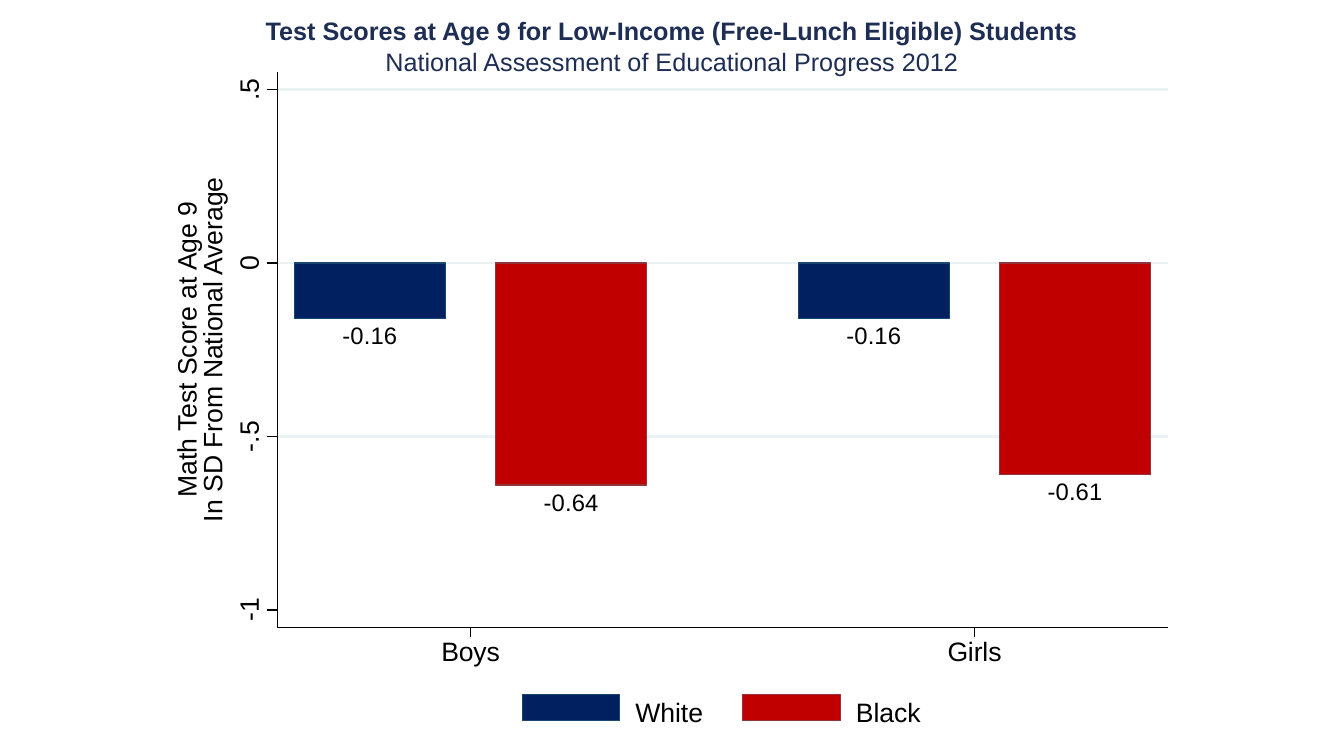
from pptx import Presentation
from pptx.chart.data import CategoryChartData
from pptx.dml.color import RGBColor
from pptx.enum.chart import XL_CHART_TYPE, XL_LABEL_POSITION, XL_TICK_LABEL_POSITION, XL_TICK_MARK
from pptx.enum.shapes import MSO_CONNECTOR, MSO_SHAPE
from pptx.enum.text import MSO_ANCHOR, PP_ALIGN
from pptx.oxml import parse_xml
from pptx.oxml.ns import nsdecls, qn
from pptx.util import Cm, Pt
from lxml.etree import SubElement

TITLE = ["Test Scores at Age 9 for Low-Income (Free-Lunch Eligible) Students",
         "National Assessment of Educational Progress 2012"]
AXIS_TITLE = ["Math Test Score at Age 9", "In SD From National Average"]
GENDERS = ["Boys", "Girls"]
SCORES = {"White": (-0.16, -0.16), "Black": (-0.64, -0.61)}
TICKS = {0.5: ".5", 0: "0", -0.5: "-.5", -1: "-1"}
COLORS = {"title": "1E2D53", "ink": "000000", "grid": "EAF2F3",
          "White": "002060", "White edge": "1A476F",
          "Black": "C00000", "Black edge": "90353B"}
FONT = "Arial"
LOW, HIGH = -1.05, 0.55
ZERO_Y, UNIT = 6.63, 8.74
AXIS_LEFT, AXIS_RIGHT, TICK = 6.99, 29.44, 0.25
BARS_LEFT, GENDER_WIDTH = 5.51, 12.7
LABEL_ROOM = 1.4
LEGEND_LEFT, LEGEND_TOP, LEGEND_STEP = 13.16, 17.5, 5.56
SWATCH_WIDTH, SWATCH_HEIGHT = 2.46, 0.66


def rgb(name):
    return RGBColor.from_string(COLORS[name])


def score_y(score):
    return ZERO_Y - score * UNIT


def add_text(slide, lines, x, y, width, height, *, size=19, color="ink",
             bold_first=False, align=PP_ALIGN.CENTER, rotation=0):
    box = slide.shapes.add_textbox(Cm(x - width / 2), Cm(y - height / 2), Cm(width), Cm(height))
    box.rotation = rotation
    frame = box.text_frame
    frame.word_wrap = True
    frame.vertical_anchor = MSO_ANCHOR.MIDDLE
    frame.margin_left = frame.margin_right = frame.margin_top = frame.margin_bottom = 0
    frame.text = "\n".join(lines)
    for index, paragraph in enumerate(frame.paragraphs):
        paragraph.alignment = align
        font = paragraph.runs[0].font
        font.name, font.size, font.bold = FONT, Pt(size), bold_first and index == 0
        font.color.rgb = rgb(color)


def add_line(slide, x1, y1, x2, y2, color="ink", weight=0.88):
    line = slide.shapes.add_connector(MSO_CONNECTOR.STRAIGHT, Cm(x1), Cm(y1), Cm(x2), Cm(y2))
    line.line.color.rgb = rgb(color)
    line.line.width = Pt(weight)
    SubElement(line._element.spPr, qn("a:effectLst"))


def paint(target, race):
    target.fill.solid()
    target.fill.fore_color.rgb = rgb(race)
    target.line.color.rgb = rgb(race + " edge")
    target.line.width = Pt(0.88)


def add_bars(slide):
    scores = CategoryChartData(number_format="0.00")
    scores.categories = GENDERS
    for race, values in SCORES.items():
        scores.add_series(race, values)
    plot_height = (HIGH - LOW) * UNIT
    height = plot_height + LABEL_ROOM
    chart = slide.shapes.add_chart(
        XL_CHART_TYPE.COLUMN_CLUSTERED, Cm(BARS_LEFT), Cm(score_y(HIGH)),
        Cm(GENDER_WIDTH * len(GENDERS)), Cm(height), scores).chart
    chart.has_legend = chart.has_title = False
    chart.font.name, chart.font.size = FONT, Pt(19)
    chart.font.color.rgb = rgb("ink")

    score_axis, gender_axis = chart.value_axis, chart.category_axis
    score_axis.minimum_scale, score_axis.maximum_scale = LOW, HIGH
    score_axis.has_major_gridlines = False
    score_axis.tick_label_position = XL_TICK_LABEL_POSITION.NONE
    gender_axis.tick_label_position = XL_TICK_LABEL_POSITION.LOW
    for axis in (score_axis, gender_axis):
        axis.major_tick_mark = XL_TICK_MARK.NONE
        axis.format.line.fill.background()

    plot = chart.plots[0]
    plot.gap_width, plot.overlap = 100, -33
    plot.vary_by_categories = False
    plot.has_data_labels = True
    labels = plot.data_labels
    labels.show_value = True
    labels.position = XL_LABEL_POSITION.OUTSIDE_END
    labels.number_format, labels.number_format_is_linked = "0.00", False
    labels.font.name, labels.font.size = FONT, Pt(17)
    labels.font.color.rgb = rgb("ink")
    for series in plot.series:
        series.invert_if_negative = False
        paint(series.format, series.name)

    plot_area = chart._chartSpace.chart.plotArea
    for layout in plot_area.findall(qn("c:layout")):
        plot_area.remove(layout)
    plot_area.insert(0, parse_xml(
        f'<c:layout {nsdecls("c")}><c:manualLayout><c:layoutTarget val="inner"/>'
        '<c:xMode val="edge"/><c:yMode val="edge"/><c:x val="0"/><c:y val="0"/>'
        f'<c:w val="1"/><c:h val="{plot_height / height:.4f}"/></c:manualLayout></c:layout>'))


def add_axes(slide):
    bottom = score_y(LOW)
    add_line(slide, AXIS_LEFT, bottom, AXIS_LEFT, score_y(HIGH))
    add_line(slide, AXIS_LEFT, bottom, AXIS_RIGHT, bottom)
    for score, label in TICKS.items():
        y = score_y(score)
        add_line(slide, AXIS_LEFT, y, AXIS_LEFT - TICK, y)
        add_text(slide, [label], 6.26, y, 1.2, 0.9, rotation=270)
    for index in range(len(GENDERS)):
        x = BARS_LEFT + (index + 0.5) * GENDER_WIDTH
        add_line(slide, x, bottom, x, bottom + TICK)
    for index, line in enumerate(AXIS_TITLE):
        add_text(slide, [line], 4.69 + index * 0.65, 8.81, 10, 0.9, rotation=270)


def add_legend(slide):
    for index, race in enumerate(SCORES):
        left = LEGEND_LEFT + index * LEGEND_STEP
        swatch = slide.shapes.add_shape(MSO_SHAPE.RECTANGLE, Cm(left), Cm(LEGEND_TOP),
                                        Cm(SWATCH_WIDTH), Cm(SWATCH_HEIGHT))
        swatch.shadow.inherit = False
        paint(swatch, race)
        add_text(slide, [race], left + 3.95, LEGEND_TOP + 0.45, 2.2, 0.9, align=PP_ALIGN.LEFT)


def main():
    """Build the test score slide and save it."""
    deck = Presentation()
    deck.slide_width, deck.slide_height = Cm(33.87), Cm(19.05)
    slide = deck.slides.add_slide(deck.slide_layouts[6])
    add_text(slide, TITLE, 16.93, 1.16, 33.86, 1.8, size=18, color="title", bold_first=True)
    for score in TICKS:
        if score > -1:
            add_line(slide, AXIS_LEFT, score_y(score), AXIS_RIGHT, score_y(score), "grid", 1.75)
    add_bars(slide)
    add_axes(slide)
    add_legend(slide)
    deck.save("out.pptx")


if __name__ == "__main__":
    main()
